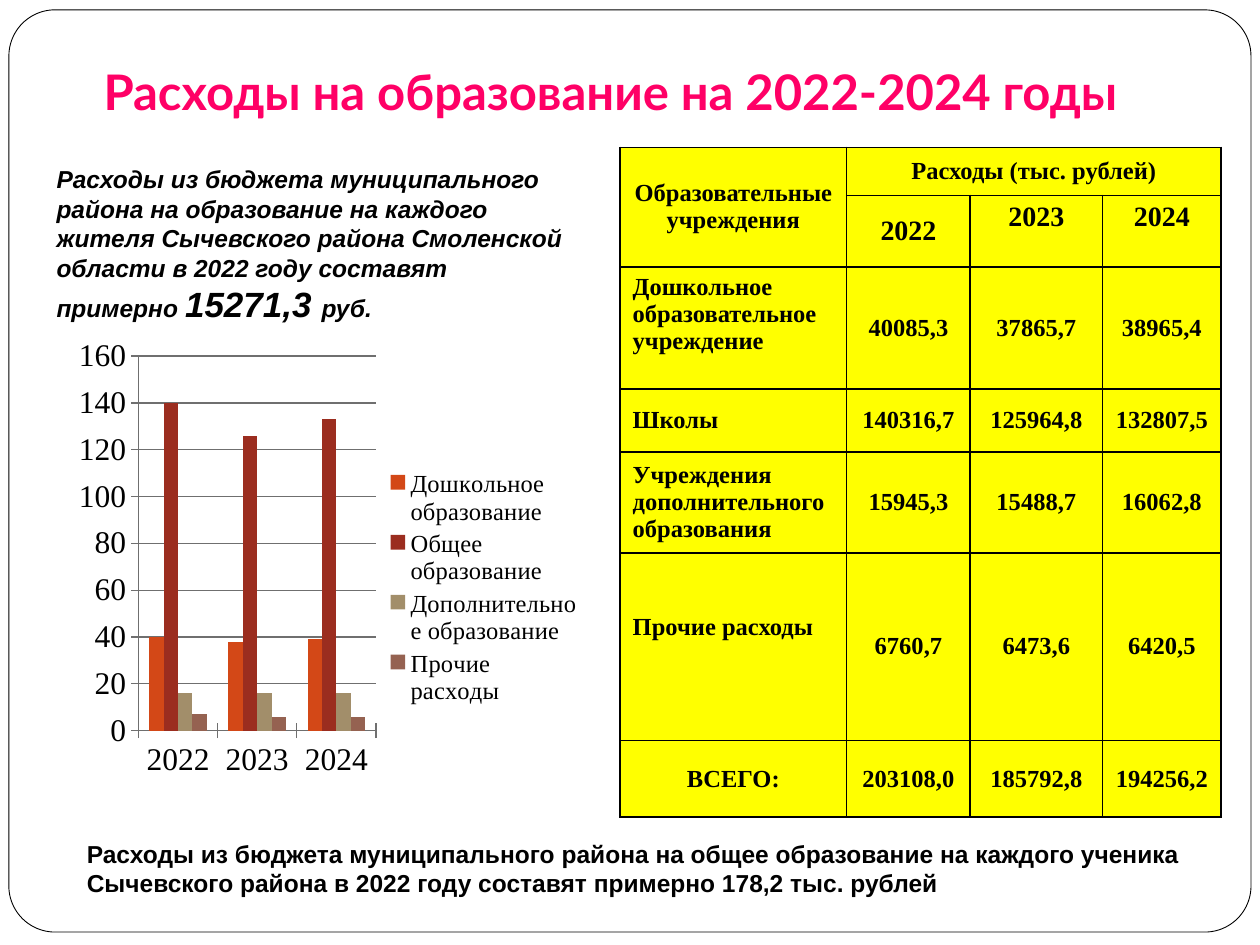
from dataclasses import dataclass

from pptx import Presentation
from pptx.chart.data import CategoryChartData
from pptx.dml.color import RGBColor
from pptx.enum import chart as ch, shapes, text
from pptx.oxml import parse_xml
from pptx.oxml.ns import nsdecls, qn
from pptx.util import Cm, Pt

LEFT, CENTER, JUSTIFY = text.PP_ALIGN.LEFT, text.PP_ALIGN.CENTER, text.PP_ALIGN.JUSTIFY
TOP, MIDDLE, BOTTOM = text.MSO_ANCHOR.TOP, text.MSO_ANCHOR.MIDDLE, text.MSO_ANCHOR.BOTTOM


@dataclass(frozen=True)
class Theme:
    """Colours, fonts and type sizes of the slide."""
    paper: str = "FFFFFF"
    ink: str = "000000"
    title: str = "FF0066"
    cell: str = "FFFF00"
    axis: str = "6F6F6F"
    series: tuple = ("D34817", "9B2D1F", "A28E6A", "956251")
    title_font: str = "Lato"
    sans: str = "Arial"
    serif: str = "Times New Roman"
    title_size: int = 28
    figure_size: int = 20
    axis_size: int = 18
    year_size: int = 16
    body_size: int = 14


T = Theme()
YEARS = ("2022", "2023", "2024")
SPENDING = {
    "Дошкольное образование": (40, 38, 39),
    "Общее образование": (140, 126, 133),
    "Дополнительное образование": (16, 16, 16),
    "Прочие расходы": (7, 6, 6),
}
TABLE_ROWS = (
    ("Образовательные учреждения", "Расходы (тыс. рублей)", "", ""),
    ("", *YEARS),
    ("Дошкольное образовательное учреждение", "40085,3", "37865,7", "38965,4"),
    ("Школы", "140316,7", "125964,8", "132807,5"),
    ("Учреждения\nдополнительного\nобразования", "15945,3", "15488,7", "16062,8"),
    ("Прочие расходы", "6760,7", "6473,6", "6420,5"),
    ("ВСЕГО:", "203108,0", "185792,8", "194256,2"),
)
COL_WIDTHS = (4.57, 2.49, 2.67, 2.39)
ROW_HEIGHTS = (0.97, 0.97, 2.46, 1.27, 1.42, 3.78, 1.55)


def rgb(code):
    """Turn a hex code into a colour."""
    return RGBColor.from_string(code)


def cm(box):
    """Turn a box in centimetres into lengths."""
    return [Cm(v) for v in box]


def write(p, content, size=T.body_size, font=T.sans, color=T.ink, bold=True,
          italic=False, align=LEFT):
    """Append a formatted run to a paragraph."""
    p.alignment = align
    r = p.add_run()
    r.text = content
    r.font.size, r.font.name = Pt(size), font
    r.font.bold, r.font.italic = bold, italic
    r.font.color.rgb = rgb(color)


def text_box(s, box, runs, anchor=MIDDLE, **style):
    """Place a wrapping text box holding one paragraph of (text, size) runs."""
    tf = s.shapes.add_textbox(*cm(box)).text_frame
    tf.word_wrap = True
    tf.vertical_anchor = anchor
    for content, size in runs:
        write(tf.paragraphs[0], content, size=size, **style)
    return tf


def add_frame(s, box):
    """Draw the rounded border of the slide."""
    sp = s.shapes.add_shape(shapes.MSO_SHAPE.ROUNDED_RECTANGLE, *cm(box))
    sp.adjustments[0] = 0.05
    sp.shadow.inherit = False
    sp.fill.solid()
    sp.fill.fore_color.rgb = rgb(T.paper)
    sp.line.color.rgb = rgb(T.ink)
    sp.line.width = Pt(0.5)


def add_title(s, box):
    """Place the slide title."""
    tf = text_box(s, box, [("Расходы на образование на 2022-2024 годы", T.title_size)],
                  anchor=BOTTOM, font=T.title_font, color=T.title, align=CENTER)
    tf.margin_bottom = Cm(0.25)


def add_resident_note(s, box):
    """Place the note on spending per resident."""
    lead = ("Расходы из бюджета муниципального района на образование на каждого жителя "
            "Сычевского района Смоленской области в 2022 году составят примерно ")
    text_box(s, box, [(lead, T.body_size), ("15271,3 ", T.figure_size),
                      ("руб.", T.body_size)], italic=True)


def add_pupil_note(s, box):
    """Place the note on spending per pupil."""
    note = ("Расходы из бюджета муниципального района на общее образование на каждого "
            "ученика Сычевского района в 2022 году составят примерно 178,2 тыс. рублей")
    text_box(s, box, [(note, T.body_size)])


def set_layout(parent, index, x, y, w, h, target=""):
    """Fix the place of a chart part in fractions of the chart."""
    for old in parent.findall(qn("c:layout")):
        parent.remove(old)
    inner = f'<c:layoutTarget val="{target}"/>' if target else ""
    parent.insert(index, parse_xml(
        f'<c:layout {nsdecls("c")}><c:manualLayout>{inner}'
        '<c:xMode val="edge"/><c:yMode val="edge"/>'
        f'<c:x val="{x}"/><c:y val="{y}"/><c:w val="{w}"/><c:h val="{h}"/>'
        '</c:manualLayout></c:layout>'))


def add_spending_chart(s, box):
    """Place the column chart of spending by year."""
    data = CategoryChartData()
    data.categories = YEARS
    for name, values in SPENDING.items():
        data.add_series(name, values)
    chart = s.shapes.add_chart(ch.XL_CHART_TYPE.COLUMN_CLUSTERED, *cm(box), data).chart
    chart.has_title = False
    chart.font.size, chart.font.name = Pt(T.axis_size), T.serif
    chart.font.color.rgb = rgb(T.ink)
    plot = chart.plots[0]
    plot.vary_by_categories = False
    plot.gap_width, plot.overlap = 150, 0
    for series, color in zip(plot.series, T.series):
        series.format.fill.solid()
        series.format.fill.fore_color.rgb = rgb(color)
    for axis in (chart.category_axis, chart.value_axis):
        axis.major_tick_mark = ch.XL_TICK_MARK.CROSS
        axis.format.line.color.rgb = rgb(T.axis)
    value_axis = chart.value_axis
    value_axis.minimum_scale, value_axis.maximum_scale = 0, 160
    value_axis.major_unit = 20
    value_axis.has_major_gridlines = True
    value_axis.major_gridlines.format.line.color.rgb = rgb(T.axis)
    chart.has_legend = True
    legend = chart.legend
    legend.position = ch.XL_LEGEND_POSITION.RIGHT
    legend.include_in_layout = False
    legend.font.size, legend.font.name = Pt(T.body_size), T.serif
    legend.font.color.rgb = rgb(T.ink)
    space = chart.element.find(qn("c:chart"))
    set_layout(space.find(qn("c:plotArea")), 0, 0.18, 0.06, 0.43, 0.72, "inner")
    set_layout(space.find(qn("c:legend")), 1, 0.63, 0.27, 0.35, 0.47)


def style_cell(cell):
    """Give a cell its fill and thin borders."""
    tc_pr = cell._tc.get_or_add_tcPr()
    for i, side in enumerate(("lnL", "lnR", "lnT", "lnB")):
        tc_pr.insert(i, parse_xml(
            f'<a:{side} {nsdecls("a")} w="{Pt(1)}"><a:solidFill>'
            f'<a:srgbClr val="{T.ink}"/></a:solidFill></a:{side}>'))
    cell.fill.solid()
    cell.fill.fore_color.rgb = rgb(T.cell)


def add_spending_table(s, box):
    """Place the table of spending by type of institution."""
    table = s.shapes.add_table(len(ROW_HEIGHTS), len(COL_WIDTHS), *cm(box)).table
    table.first_row = table.horz_banding = False
    for col, width in zip(table.columns, COL_WIDTHS):
        col.width = Cm(box[2] * width / sum(COL_WIDTHS))
    for row, height in zip(table.rows, ROW_HEIGHTS):
        row.height = Cm(box[3] * height / sum(ROW_HEIGHTS))
    for i, row in enumerate(TABLE_ROWS):
        for j, content in enumerate(row):
            cell = table.cell(i, j)
            style_cell(cell)
            top = (i, j) in ((1, 2), (1, 3), (2, 0), (5, 0))
            cell.vertical_anchor = TOP if top else MIDDLE
            align = JUSTIFY if j == 0 and 2 <= i <= 5 else CENTER
            size = T.year_size if i == 1 and j else T.body_size
            tf = cell.text_frame
            for k, line in enumerate(content.split("\n") if content else ()):
                p = tf.add_paragraph() if k else tf.paragraphs[0]
                write(p, line, size=size, font=T.serif, align=align)
    table.cell(5, 0).margin_top = Cm(1.22)
    table.cell(0, 0).merge(table.cell(1, 0))
    table.cell(0, 1).merge(table.cell(0, 3))


def main():
    """Build the slide and save it."""
    prs = Presentation()
    prs.slide_width, prs.slide_height = Cm(25.4), Cm(19.05)
    s = prs.slides.add_slide(prs.slide_layouts[6])
    add_frame(s, (0.18, 0.2, 25.04, 18.59))
    add_title(s, (0, 0.71, 24.61, 1.96))
    add_spending_table(s, (12.5, 2.97, 12.12, 12.42))
    add_resident_note(s, (0.89, 3.12, 10.8, 3.61))
    add_pupil_note(s, (1.5, 16.92, 22.86, 1.17))
    add_spending_chart(s, (0.79, 6.55, 11.13, 10.49))
    prs.save("out.pptx")


if __name__ == "__main__":
    main()
